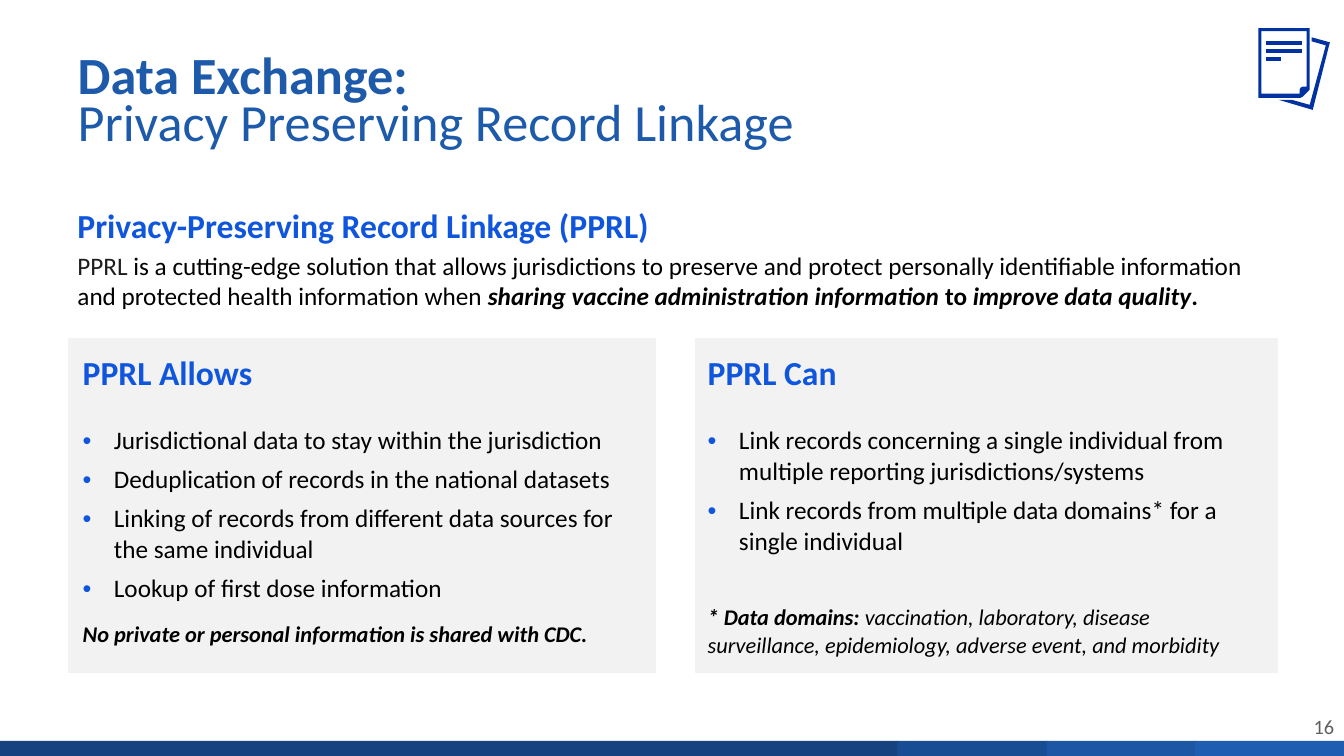
from dataclasses import dataclass

from lxml import etree
from pptx import Presentation
from pptx.dml.color import RGBColor
from pptx.enum.shapes import MSO_SHAPE
from pptx.enum.text import MSO_ANCHOR, PP_ALIGN
from pptx.oxml.ns import qn
from pptx.util import Inches, Pt

RECTANGLE = MSO_SHAPE.RECTANGLE
TOP, MIDDLE, BOTTOM = MSO_ANCHOR.TOP, MSO_ANCHOR.MIDDLE, MSO_ANCHOR.BOTTOM
LEFT, RIGHT = PP_ALIGN.LEFT, PP_ALIGN.RIGHT
NO_STYLE = "{2D5ABB26-0587-4C30-8999-92F81FD0307C}"


@dataclass(frozen=True)
class Theme:
    font: str = "Calibri"
    title: str = "1E5AAA"
    accent: str = "0F56DC"
    text: str = "000000"
    lead: str = "1D1D1D"
    number: str = "5F5F5F"
    icon: str = "0033A1"
    panel: str = "F2F2F2"
    white: str = "FFFFFF"
    bars: tuple = ("164380", "194D93", "1C56A4", "1E5DB2")
    title_size: float = 37.3
    heading_size: float = 24
    body_size: float = 18
    note_size: float = 16
    number_size: float = 14.5


class Page:
    def __init__(self, deck, theme):
        self.theme = theme
        self.slide = deck.slides.add_slide(deck.slide_layouts[5])
        self.shapes = self.slide.shapes

    def style(self, font, size, color, bold=False, italic=False):
        font.name, font.size = self.theme.font, Pt(size)
        font.bold, font.italic = bold, italic
        font.color.rgb = RGBColor.from_string(color)

    def paint(self, shape, color):
        shape.shadow.inherit = False
        shape.fill.solid()
        shape.fill.fore_color.rgb = RGBColor.from_string(color)
        shape.line.fill.background()

    def title(self, heading, subtitle, left, top, width, height):
        box = self.shapes.title
        box.left, box.top, box.width, box.height = map(Inches, (left, top, width, height))
        box.text_frame.vertical_anchor = BOTTOM
        para = box.text_frame.paragraphs[0]
        para.alignment, para.line_spacing = LEFT, 0.76
        self.style(para.font, self.theme.title_size, self.theme.title)
        span = para.add_run()
        span.text = heading
        span.font.bold = True
        para.add_line_break()
        para.add_run().text = subtitle

    def bar(self, left, top, width, height, color):
        self.paint(self.shapes.add_shape(RECTANGLE, *map(Inches, (left, top, width, height))), color)

    def outline(self, contours, color):
        contours = [[(Inches(x), Inches(y)) for x, y in contour] for contour in contours]
        builder = self.shapes.build_freeform(*contours[0][0])
        builder.add_line_segments(contours[0][1:], close=True)
        for start, *rest in contours[1:]:
            builder.move_to(*start)
            builder.add_line_segments(rest, close=True)
        self.paint(builder.convert_to_shape(), color)

    def frame(self, left, top, width, height):
        box = self.shapes.add_textbox(*map(Inches, (left, top, width, height)))
        box.text_frame.word_wrap = True
        return box.text_frame

    def para(self, frame, spans, size, color, bold=False, italic=False, before=0, first=False):
        para = frame.paragraphs[0] if first else frame.add_paragraph()
        para.space_before = Pt(before)
        self.style(para.font, size, color, bold, italic)
        for text, changes in spans:
            span = para.add_run()
            span.text = text
            if "color" in changes:
                span.font.color.rgb = RGBColor.from_string(changes["color"])
            if "bold" in changes:
                span.font.bold = changes["bold"]
            if "italic" in changes:
                span.font.italic = changes["italic"]
        return para

    def bullet(self, frame, text, first):
        para = self.para(frame, [(text, {})], self.theme.body_size, self.theme.text, before=6, first=first)
        props = para._p.get_or_add_pPr()
        props.set("marL", str(Inches(0.31)))
        props.set("indent", str(Inches(-0.31)))
        color = etree.SubElement(props, qn("a:buClr"))
        etree.SubElement(color, qn("a:srgbClr"), val=self.theme.accent)
        etree.SubElement(props, qn("a:buFont"), typeface="Arial")
        etree.SubElement(props, qn("a:buChar"), char="•")
        props.extend(props.findall(qn("a:defRPr")))

    def border(self, cell, sides):
        props = cell._tc.get_or_add_tcPr()
        for place, (side, points) in enumerate(sides):
            line = etree.Element(qn(f"a:ln{side}"), w=str(Pt(points)))
            fill = etree.SubElement(line, qn("a:solidFill"))
            etree.SubElement(fill, qn("a:srgbClr"), val=self.theme.white)
            props.insert(place, line)

    def table(self, left, top, widths, heights):
        table = self.shapes.add_table(
            len(heights), len(widths),
            *map(Inches, (left, top, sum(widths), sum(heights)))).table
        table.first_row = table.horz_banding = False
        table._tbl.tblPr.find(qn("a:tableStyleId")).text = NO_STYLE
        for column, width in zip(table.columns, widths):
            column.width = Inches(width)
        for row, height in zip(table.rows, heights):
            row.height = Inches(height)
        last = len(widths) - 1
        for r in range(len(heights)):
            for c in range(len(widths)):
                cell = table.cell(r, c)
                cell.fill.solid()
                cell.fill.fore_color.rgb = RGBColor.from_string(
                    self.theme.white if c == 1 else self.theme.panel)
                cell.vertical_anchor = TOP if r else MIDDLE
                cell.margin_left = cell.margin_right = Inches(0.15)
                cell.margin_top = cell.margin_bottom = Inches(0.15)
                self.border(cell, [("L", 4.5 if c else 1), ("R", 4.5 if c < last else 1),
                                   ("B" if r else "T", 1)])
        return table


def rectangle(left, top, right, bottom):
    return [(left, top), (right, top), (right, bottom), (left, bottom)]


def main():
    theme = Theme()
    deck = Presentation()
    deck.slide_width, deck.slide_height = Inches(13.33), Inches(7.5)
    page = Page(deck, theme)

    edges = (0, 8.9, 10.38, 11.85, 13.33)
    for left, right, color in zip(edges, edges[1:], theme.bars):
        page.bar(left, 7.35, min(right + 0.01, edges[-1]) - left, 0.15, color)

    page.title("Data Exchange:", "Privacy Preserving Record Linkage", 0.67, 0.3, 12, 1.25)

    intro = page.frame(0.67, 1.98, 12, 1.25)
    page.para(intro, [("Privacy-Preserving Record Linkage (PPRL)", {})],
              theme.heading_size, theme.accent, bold=True, first=True)
    strong = {"bold": True, "italic": True}
    page.para(intro, [
        ("PPRL ", {"color": theme.lead}),
        ("is a cutting-edge solution that allows jurisdictions to preserve and protect personally "
         "identifiable information and protected health information when ", {}),
        ("sharing vaccine administration information ", strong),
        ("to ", {"bold": True}),
        ("improve data quality", strong),
        (".", {"bold": True}),
    ], theme.body_size, theme.text, before=3.6)

    panels = [
        (0, "PPRL Allows",
         ["Jurisdictional data to stay within the jurisdiction",
          "Deduplication of records in the national datasets",
          "Linking of records from different data sources for the same individual",
          "Lookup of first dose information"],
         [("No private or personal information is shared with CDC.", {"bold": True})], 12),
        (2, "PPRL Can",
         ["Link records concerning a single individual from multiple reporting jurisdictions/systems",
          "Link records from multiple data domains* for a single individual"],
         [("* Data domains: ", {"bold": True}),
          ("vaccination, laboratory, disease surveillance, epidemiology, adverse event, "
           "and morbidity", {})], 34),
    ]
    table = page.table(0.67, 3.35, (5.86, 0.33, 5.81), (0.72, 2.61))
    for column, heading, bullets, note, gap in panels:
        page.para(table.cell(0, column).text_frame, [(heading, {})],
                  theme.heading_size, theme.accent, bold=True, first=True)
        frame = table.cell(1, column).text_frame
        for place, text in enumerate(bullets):
            page.bullet(frame, text, first=place == 0)
        page.para(frame, note, theme.note_size, theme.text, italic=True, before=gap)

    back_sheet = [(13.01, 0.37), (13.19, 0.42), (13.02, 1.09), (12.68, 0.99), (12.81, 0.99),
                  (12.99, 1.04), (13.15, 0.45), (13.01, 0.41)]
    front_sheet = [(12.48, 0.28), (12.48, 0.97), (12.9, 0.97), (12.92, 0.96), (12.99, 0.89),
                   (12.99, 0.28)]
    front_hole = [(12.96, 0.86), (12.92, 0.86), (12.9, 0.87), (12.89, 0.89), (12.89, 0.93),
                  (12.51, 0.93), (12.51, 0.31), (12.96, 0.31)]
    page.outline([back_sheet], theme.icon)
    page.outline([front_sheet, front_hole], theme.icon)
    for row, right in enumerate((12.91, 12.91, 12.71)):
        top = 0.41 + 0.08 * row
        page.outline([rectangle(12.56, top, right, top + 0.04)], theme.icon)

    number = page.frame(12.32, 7.04, 1.01, 0.35)
    para = page.para(number, [("16", {})], theme.number_size, theme.number, first=True)
    para.alignment = RIGHT

    deck.save("out.pptx")


if __name__ == "__main__":
    main()
